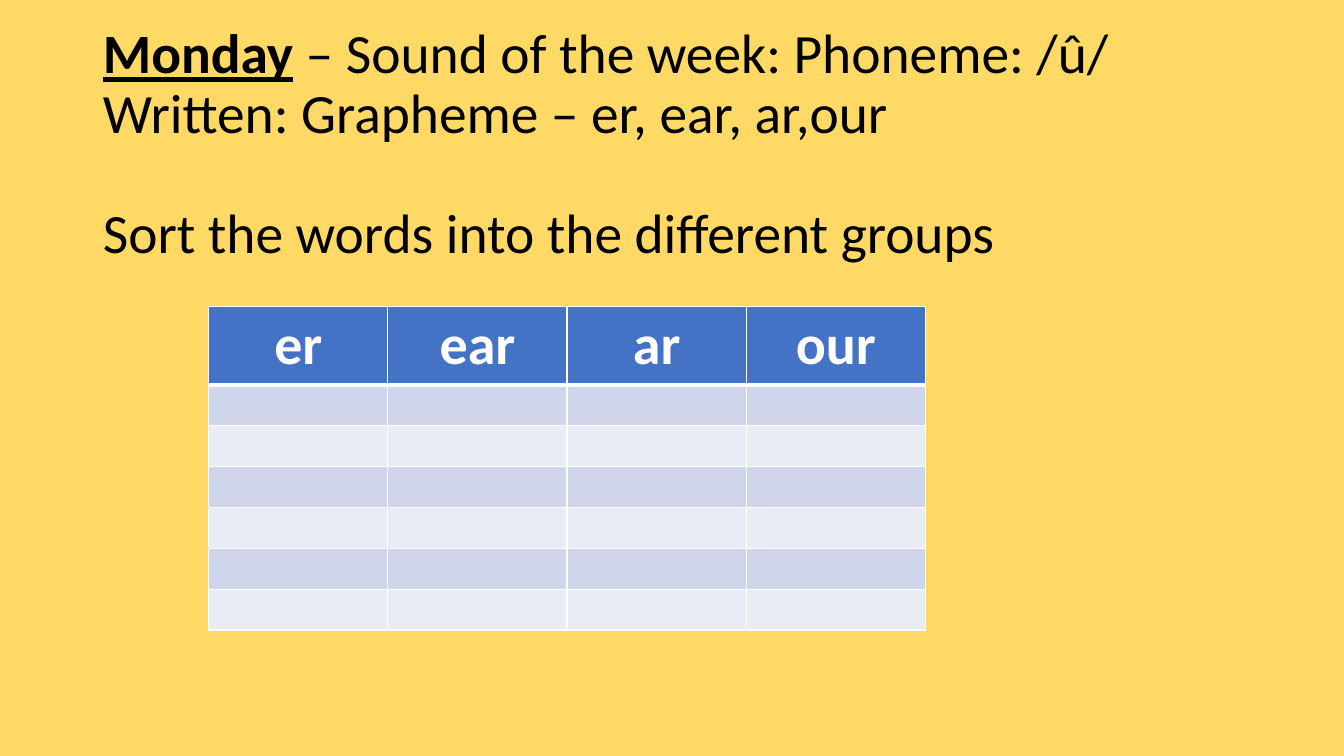
from lxml import etree
from pptx import Presentation
from pptx.dml.color import RGBColor
from pptx.enum.text import MSO_ANCHOR, MSO_AUTO_SIZE, PP_ALIGN
from pptx.oxml.ns import qn
from pptx.util import Inches, Pt

LEFT, CENTER = PP_ALIGN.LEFT, PP_ALIGN.CENTER
MIDDLE = MSO_ANCHOR.MIDDLE
NO_AUTOFIT = MSO_AUTO_SIZE.NONE
TITLE_ONLY = 5

COLORS = {
    "background": "FFD966",
    "text": "000000",
    "border": "FFFFFF",
    "header": "4472C4",
    "header_text": "FFFFFF",
    "dark_band": "CFD5EA",
    "light_band": "E9EBF5",
}
GRAPHEMES = ["er", "ear", "ar", "our"]
WORD_ROWS = 6


def color(name):
    return RGBColor.from_string(COLORS[name])


def add_span(para, text, size, color_name="text", bold=False, underline=False, font="Calibri"):
    span = para.add_run()
    span.text = text
    span.font.name = font
    span.font.size = Pt(size)
    span.font.bold = bold
    span.font.underline = underline
    span.font.color.rgb = color(color_name)


def set_borders(cell, **widths):
    """Draw the cell's sides; widths are points keyed by L, R, T and B."""
    properties = cell._tc.get_or_add_tcPr()
    for side in "LRTB":
        line = etree.SubElement(properties, qn(f"a:ln{side}"), w=str(Pt(widths[side])))
        fill = etree.SubElement(line, qn("a:solidFill"))
        etree.SubElement(fill, qn("a:srgbClr"), val=COLORS["border"])


class LessonSlide:
    title_size = 39.6
    header_size = 40

    def __init__(self, deck):
        self.page = deck.slides.add_slide(deck.slide_layouts[TITLE_ONLY])
        background = self.page.background.fill
        background.solid()
        background.fore_color.rgb = color("background")

    def add_title(self, day, sound, graphemes, task, left, top, width, height):
        box = self.page.shapes.title
        box.left, box.top = Inches(left), Inches(top)
        box.width, box.height = Inches(width), Inches(height)
        frame = box.text_frame
        frame.word_wrap = True
        frame.auto_size = NO_AUTOFIT
        frame.vertical_anchor = MIDDLE

        heading = frame.paragraphs[0]
        add_span(heading, day, self.title_size, bold=True, underline=True)
        add_span(heading, sound, self.title_size)
        heading.add_line_break()
        add_span(heading, graphemes, self.title_size)

        instruction = frame.add_paragraph()
        instruction.space_before = Pt(43)
        add_span(instruction, task, self.title_size)
        for para in frame.paragraphs:
            para.alignment = LEFT
            para.line_spacing = 0.9

    def add_sorting_table(self, headings, word_rows, left, top, width, height, header_height):
        table = self.page.shapes.add_table(
            word_rows + 1, len(headings),
            Inches(left), Inches(top), Inches(width), Inches(height),
        ).table
        for column in table.columns:
            column.width = Inches(width / len(headings))
        for index, row in enumerate(table.rows):
            is_header = index == 0
            row.height = Inches(header_height if is_header else (height - header_height) / word_rows)
            band = "header" if is_header else "dark_band" if index % 2 else "light_band"
            for cell in row.cells:
                set_borders(cell, L=1, R=1, T=3 if index == 1 else 1, B=3 if is_header else 1)
                cell.fill.solid()
                cell.fill.fore_color.rgb = color(band)
        for cell, heading in zip(table.rows[0].cells, headings):
            para = cell.text_frame.paragraphs[0]
            para.alignment = CENTER
            add_span(para, heading, self.header_size, color_name="header_text", bold=True)


def main():
    deck = Presentation()
    deck.slide_width, deck.slide_height = Inches(13.33), Inches(7.5)
    lesson = LessonSlide(deck)
    lesson.add_title(
        "Monday",
        " – Sound of the week: Phoneme: /û/",
        "Written: Grapheme – er, ear, ar,our",
        "Sort the words into the different groups",
        left=0.92, top=0.72, width=11.5, height=1.45,
    )
    lesson.add_sorting_table(
        GRAPHEMES, WORD_ROWS,
        left=2.07, top=3.04, width=7.11, height=3.2, header_height=0.77,
    )
    deck.save("out.pptx")


if __name__ == "__main__":
    main()
